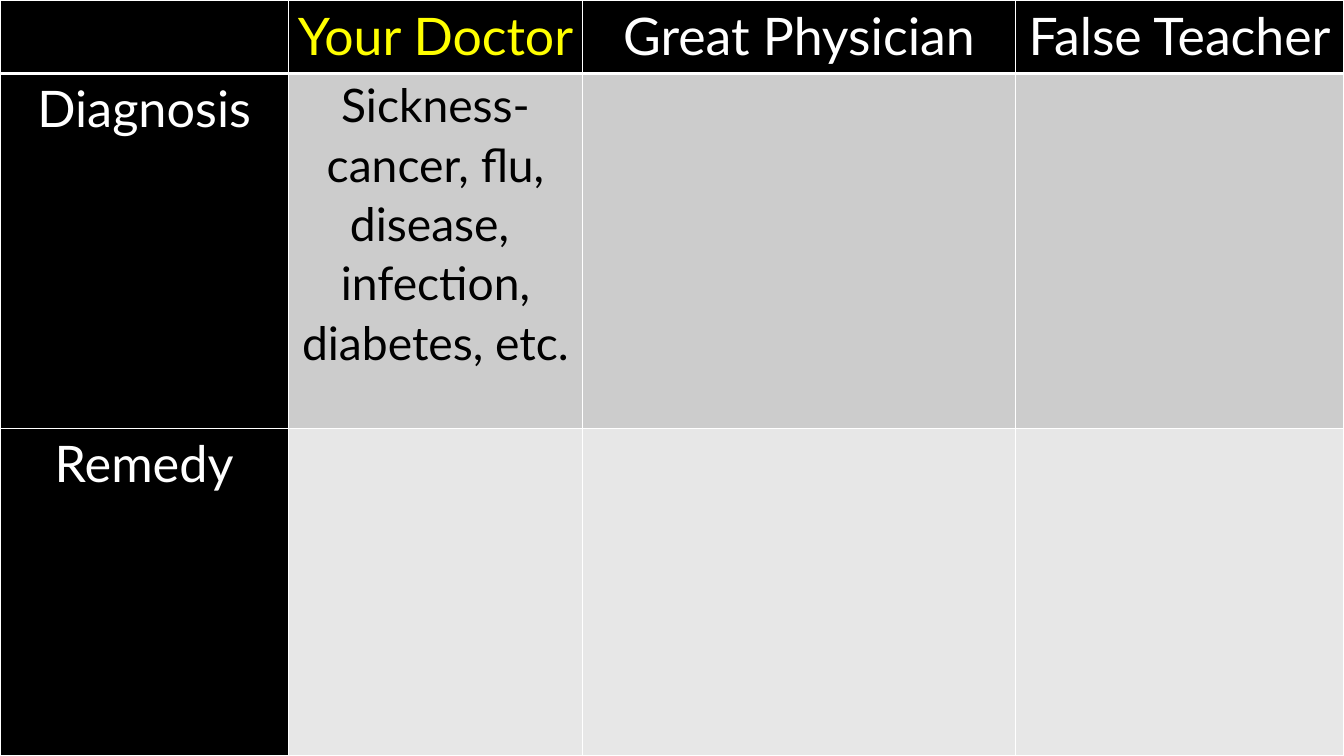
from dataclasses import dataclass

from lxml import etree
from pptx import Presentation
from pptx import util as u
from pptx.dml import color
from pptx.enum import text
from pptx.oxml import ns


@dataclass(frozen=True)
class Theme:
    """Colours, font and type sizes of the slide."""
    black: str = "000000"
    white: str = "FFFFFF"
    accent: str = "FFFF00"
    dark: str = "CCCCCC"
    light: str = "E7E7E7"
    font: str = "Lato"
    head: int = 37
    label: int = 36
    body: int = 33
    thin: int = 1
    thick: int = 3


THEME = Theme()
COLS = (2.86, 2.92, 4.29, 3.26)
ROWS = (0.73, 3.52, 3.25)
GRID = (
    ("", "Your Doctor", "Great Physician", "False Teacher"),
    ("Diagnosis", "Sickness-\ncancer, flu, disease, \ninfection, diabetes, etc.", "", ""),
    ("Remedy", "", "", ""),
)


def rgb(code):
    """Turn a hex code into a colour."""
    return color.RGBColor.from_string(code)


def style(row, col):
    """Return the fill, text colour and type size of a cell."""
    if row == 0:
        return THEME.black, THEME.accent if col == 1 else THEME.white, THEME.head
    if col == 0:
        return THEME.black, THEME.white, THEME.label
    return (THEME.dark if row == 1 else THEME.light), THEME.black, THEME.body


def edge(props, side, width):
    """Add a solid white border to one side of a cell."""
    line = etree.SubElement(props, ns.qn(f"a:ln{side}"), w=str(u.Pt(width)))
    fill = etree.SubElement(line, ns.qn("a:solidFill"))
    etree.SubElement(fill, ns.qn("a:srgbClr"), val=THEME.white)


def border(cell, row):
    """Draw the cell borders, with a thick rule under the header."""
    props = cell._tc.get_or_add_tcPr()
    for side in "LRTB":
        rule = (row, side) in ((0, "B"), (1, "T"))
        edge(props, side, THEME.thick if rule else THEME.thin)


def write(cell, words, ink, size):
    """Write centred paragraphs into a cell."""
    cell.margin_left = cell.margin_right = u.Inches(0.07)
    cell.margin_top = cell.margin_bottom = 0
    cell.text = words
    for para in cell.text_frame.paragraphs:
        para.alignment = text.PP_ALIGN.CENTER
        para.line_spacing = 1.07
        para.font.name = THEME.font
        para.font.size = u.Pt(size)
        para.font.color.rgb = rgb(ink)


def chart(slide):
    """Add the comparison table across the slide."""
    frame = slide.shapes.add_table(len(ROWS), len(COLS), 0, 0,
                                   u.Inches(sum(COLS)), u.Inches(sum(ROWS)))
    table = frame.table
    for col, width in zip(table.columns, COLS):
        col.width = u.Inches(width)
    for row, height in zip(table.rows, ROWS):
        row.height = u.Inches(height)
    for r, line in enumerate(GRID):
        for c, words in enumerate(line):
            cell = table.cell(r, c)
            back, ink, size = style(r, c)
            border(cell, r)
            cell.fill.solid()
            cell.fill.fore_color.rgb = rgb(back)
            write(cell, words, ink, size)


def main():
    """Build and save the slide."""
    deck = Presentation()
    deck.slide_width, deck.slide_height = u.Inches(13.33), u.Inches(7.5)
    slide = deck.slides.add_slide(deck.slide_layouts[6])
    slide.background.fill.solid()
    slide.background.fill.fore_color.rgb = rgb(THEME.black)
    chart(slide)
    deck.save("out.pptx")


if __name__ == "__main__":
    main()
